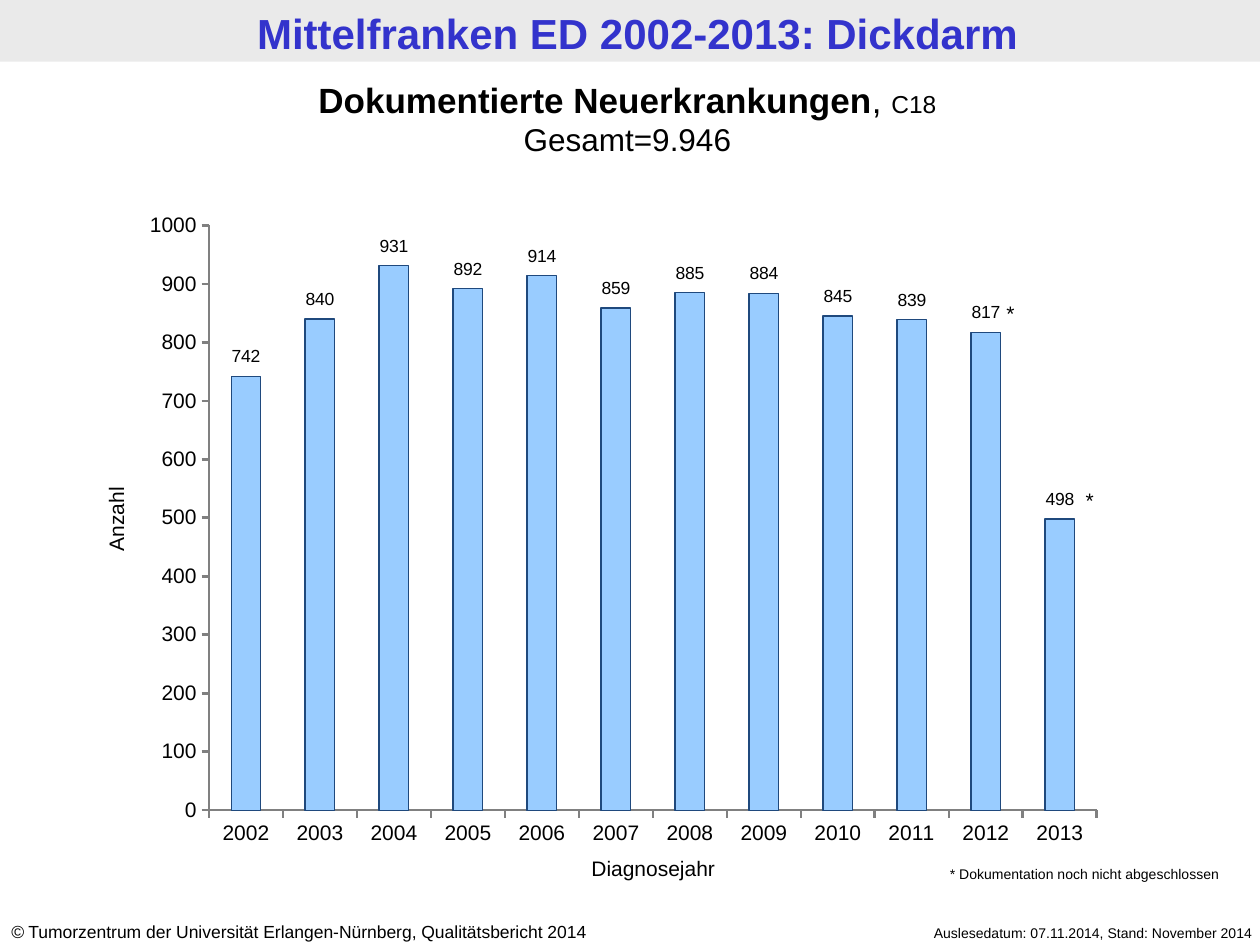
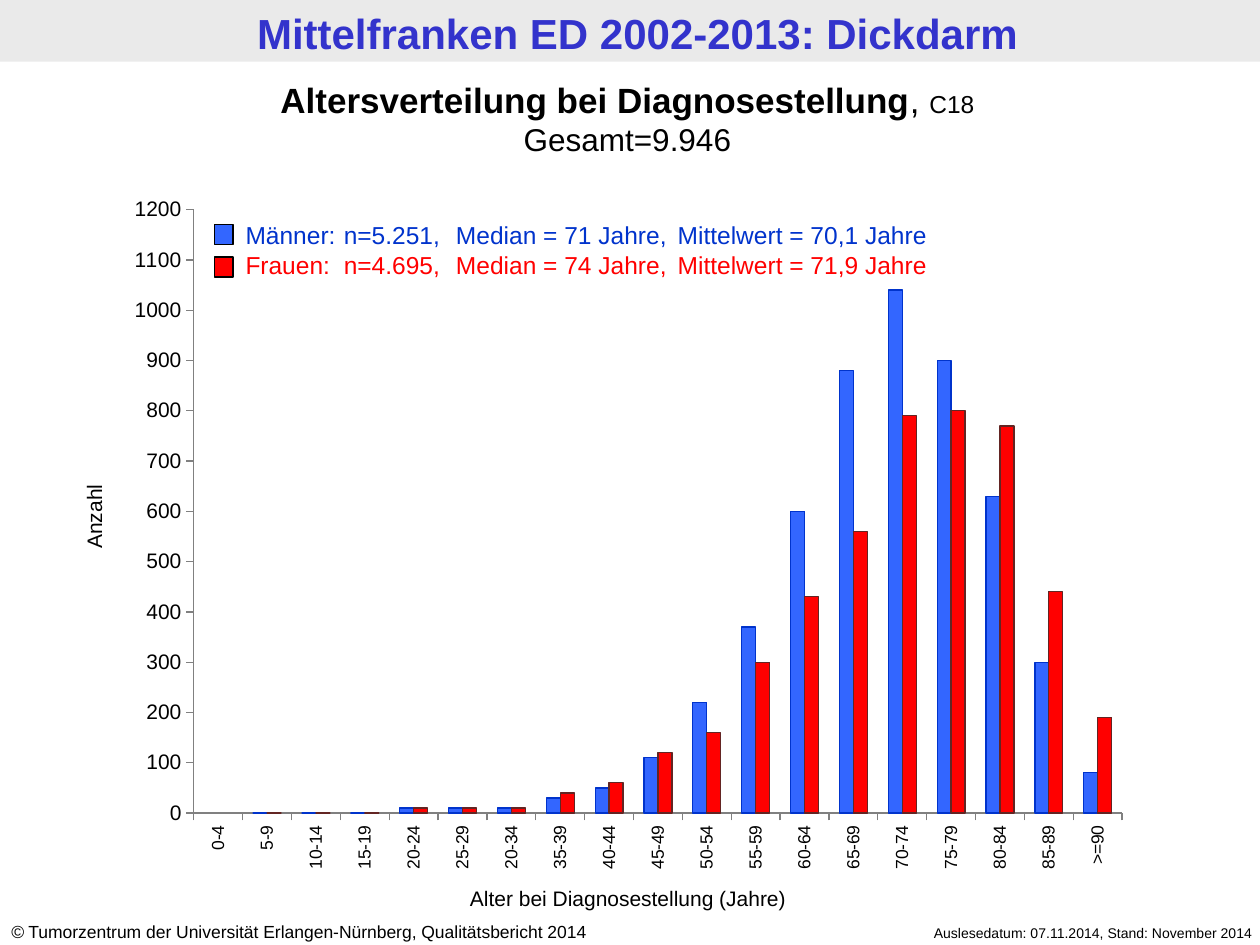
from lxml.etree import SubElement
from pptx import Presentation
from pptx.chart.data import CategoryChartData
from pptx.dml.color import RGBColor
from pptx.enum.chart import XL_CHART_TYPE, XL_TICK_MARK
from pptx.enum.shapes import MSO_SHAPE
from pptx.enum.text import MSO_ANCHOR, MSO_AUTO_SIZE, PP_ALIGN
from pptx.oxml import parse_xml
from pptx.oxml.ns import nsdecls, qn
from pptx.util import Inches, Pt

# Shared style
FONT = "Arial"
BLACK, GREY, BAND, TITLE_BLUE = "000000", "808080", "EAEAEA", "3333CC"
LIGHT_BLUE, NAVY = "99CCFF", "1F497D"
MEN_FILL, MEN_LINE = "3366FF", "0033CC"
WOMEN_FILL, WOMEN_LINE = "FF0000", "632523"
LEFT, CENTER, RIGHT = PP_ALIGN.LEFT, PP_ALIGN.CENTER, PP_ALIGN.RIGHT
COLUMNS, ROWS = 100, 75


def color(hex_string):
    return RGBColor.from_string(hex_string)


def add_run(paragraph, text, size=12, ink=BLACK, bold=False, italic=False):
    run = paragraph.add_run()
    run.text = text
    font = run.font
    font.name, font.size = FONT, Pt(size)
    font.bold, font.italic = bold, italic
    font.color.rgb = color(ink)


def manual_layout(inner=False, **shares):
    """Layout element for a plot area or a data label."""
    target = '<c:layoutTarget val="inner"/>' if inner else ""
    modes = "".join(f'<c:{side}Mode val="edge"/>' for side in "xy") if inner else ""
    values = "".join(f'<c:{key} val="{value:.4f}"/>' for key, value in shares.items())
    return parse_xml(f'<c:layout {nsdecls("c")}><c:manualLayout>{target}{modes}{values}'
                     '</c:manualLayout></c:layout>')


class Deck:
    def __init__(self):
        self.presentation = Presentation()
        self.presentation.slide_width = Inches(10)
        self.presentation.slide_height = Inches(7.5)
        self.slide = None

    def box(self, left, top, width, height):
        """Grid columns and rows to slide lengths."""
        column = self.presentation.slide_width / COLUMNS
        row = self.presentation.slide_height / ROWS
        return (int(left * column), int(top * row), int(width * column), int(height * row))

    def fill_text(self, frame, paragraphs, align=LEFT, tabs=()):
        """Each paragraph is a list of (text, format) runs."""
        frame.word_wrap = True
        frame.auto_size = MSO_AUTO_SIZE.NONE
        frame.vertical_anchor = MSO_ANCHOR.TOP
        for index, runs in enumerate(paragraphs):
            paragraph = frame.add_paragraph() if index else frame.paragraphs[0]
            paragraph.alignment = align
            if tabs:
                tab_list = SubElement(paragraph._p.get_or_add_pPr(), qn("a:tabLst"))
                for position in tabs:
                    SubElement(tab_list, qn("a:tab"), pos=str(Inches(position)), algn="l")
            for text, style in runs:
                add_run(paragraph, text, **style)

    def text(self, place, paragraphs, align=LEFT, rotation=0, tabs=()):
        shape = self.slide.shapes.add_textbox(*self.box(*place))
        shape.rotation = rotation
        self.fill_text(shape.text_frame, paragraphs, align, tabs)

    def label(self, place, text, align=CENTER, rotation=0, **style):
        self.text(place, [[(text, style)]], align, rotation)

    def rectangle(self, place, fill, line=None):
        shape = self.slide.shapes.add_shape(MSO_SHAPE.RECTANGLE, *self.box(*place))
        shape.shadow.inherit = False
        shape.fill.solid()
        shape.fill.fore_color.rgb = color(fill)
        if line:
            shape.line.color.rgb = color(line)
            shape.line.width = Pt(0.75)
        else:
            shape.line.fill.background()

    def new_slide(self, heading):
        """Title-only slide with band, heading and footers."""
        self.slide = self.presentation.slides.add_slide(self.presentation.slide_layouts[5])
        self.rectangle((0, 0, 100, 4.9), BAND)
        self.label((0.6, 0.1, 100, 4.9), "Mittelfranken ED 2002-2013: Dickdarm",
                   size=24, ink=TITLE_BLUE, bold=True)
        self.label((66.5, 72.9, 33.9, 2.4), "Auslesedatum: 07.11.2014, Stand: November 2014",
                   RIGHT, size=8)
        self.text((-0.1, 72.6, 52.4, 2.7), [[
            ("©", dict(size=10, italic=True)),
            (" Tumorzentrum der Universität Erlangen-Nürnberg, Qualitätsbericht 2014",
             dict(size=10))]])
        title = self.slide.shapes.title
        title.left, title.top, title.width, title.height = self.box(-0.4, 5.7, 100.4, 7.4)
        self.fill_text(title.text_frame, [
            [(heading, dict(size=20, bold=True)), (", ", dict(size=20)), ("C18", dict(size=14))],
            [("Gesamt=9.946", dict(size=18))]], CENTER)

    def chart(self, place, kind, categories, series_values, colors, maximum, plot_area,
              overlap=0, category_size=12, axis_width=0.75):
        data = CategoryChartData()
        data.categories = categories
        for number, values in enumerate(series_values, 1):
            data.add_series(f"Series {number}", values)
        chart = self.slide.shapes.add_chart(kind, *self.box(*place), data).chart
        chart.has_legend = chart.has_title = False
        chart.font.name, chart.font.size = FONT, Pt(12)
        chart.font.color.rgb = color(BLACK)

        plot = chart.plots[0]
        plot.gap_width, plot.overlap, plot.vary_by_categories = 150, overlap, False
        for series, (fill, line) in zip(plot.series, colors):
            series.format.fill.solid()
            series.format.fill.fore_color.rgb = color(fill)
            series.format.line.color.rgb = color(line)
            series.format.line.width = Pt(0.75)

        value_axis, category_axis = chart.value_axis, chart.category_axis
        value_axis.minimum_scale, value_axis.maximum_scale = 0, maximum
        value_axis.major_unit = 100
        for axis, size in ((value_axis, 12), (category_axis, category_size)):
            axis.has_major_gridlines = False
            axis.major_tick_mark = XL_TICK_MARK.OUTSIDE
            axis.minor_tick_mark = XL_TICK_MARK.NONE
            axis.tick_labels.font.size = Pt(size)
            axis.tick_labels.font.name = FONT
            axis.format.line.color.rgb = color(GREY)
            axis.format.line.width = Pt(axis_width)

        area = chart._chartSpace.chart.plotArea
        for layout in area.findall(qn("c:layout")):
            area.remove(layout)
        area.insert(0, manual_layout(True, **plot_area))
        return chart

    def labels_above(self, chart, maximum, plot_height, gap):
        """Move the centred value labels of a stacked chart above the bars."""
        series = chart.plots[0].series[0]
        labels = series.data_labels
        labels.show_value = True
        labels.font.size = Pt(10)
        for index in range(len(series.values)):
            series.points[index].data_label.font.size = Pt(10)
        for leader in labels._element.findall(qn("c:showLeaderLines")):
            leader.set("val", "0")
        for element, value in zip(labels._element.findall(qn("c:dLbl")), series.values):
            rise = value / maximum / 2 * plot_height + gap
            element.insert(1, manual_layout(x=0, y=-rise))


def build_new_cases(deck):
    deck.new_slide("Dokumentierte Neuerkrankungen")
    plot_area = dict(x=0.066, y=0.029, w=0.914, h=0.903)
    cases = [742, 840, 931, 892, 914, 859, 885, 884, 845, 839, 817, 498]
    chart = deck.chart((11.5, 16.4, 77.1, 51.4), XL_CHART_TYPE.COLUMN_STACKED,
                       [str(year) for year in range(2002, 2014)], [cases],
                       [(LIGHT_BLUE, NAVY)], 1000, plot_area, overlap=100, axis_width=1.5)
    deck.labels_above(chart, 1000, plot_area["h"], 0.03)
    deck.label((40.6, 67.4, 22.5, 3), "Diagnosejahr")
    deck.label((3.1, 39.7, 12.2, 3), "Anzahl", rotation=270)

    # Marks for incomplete years
    for left, top in ((77.6, 23.4), (83.9, 38.2)):
        deck.label((left, top, 3.9, 3), "*", RIGHT)
    deck.label((74.4, 68.2, 24.4, 2.4), "* Dokumentation noch nicht abgeschlossen", LEFT, size=8)


def build_age_distribution(deck):
    deck.new_slide("Altersverteilung bei Diagnosestellung")
    ages = ["0-4", "5-9", "10-14", "15-19", "20-24", "25-29", "20-34", "35-39", "40-44",
            "45-49", "50-54", "55-59", "60-64", "65-69", "70-74", "75-79", "80-84",
            "85-89", ">=90"]
    men = [None, 0, 0, 0, 10, 10, 10, 30, 50, 110, 220, 370, 600, 880, 1040, 900, 630, 300, 80]
    women = [None, 0, 0, 0, 10, 10, 10, 40, 60, 120, 160, 300, 430, 560, 790, 800, 770, 440, 190]
    chart = deck.chart((9.1, 14.7, 81.6, 55.5), XL_CHART_TYPE.COLUMN_CLUSTERED, ages,
                       [men, women], [(MEN_FILL, MEN_LINE), (WOMEN_FILL, WOMEN_LINE)],
                       1200, dict(x=0.077, y=0.035, w=0.903, h=0.863), category_size=10)
    body = chart.category_axis._element.find(qn("c:txPr")).find(qn("a:bodyPr"))
    body.set("rot", "-5400000")
    body.set("vert", "horz")

    # Key with statistics
    deck.text((18.5, 17, 68.5, 5.7), [
        [("Männer:\tn=5.251,\tMedian = 71 Jahre,\tMittelwert = 70,1 Jahre",
          dict(size=14, ink=MEN_LINE))],
        [("Frauen:\tn=4.695,\tMedian = 74 Jahre,\tMittelwert = 71,9 Jahre",
          dict(size=14, ink=WOMEN_FILL))]], tabs=(0.78, 1.67, 3.43))
    for top, fill in ((17.8, MEN_FILL), (20.4, WOMEN_FILL)):
        deck.rectangle((17, top, 1.5, 1.6), fill, BLACK)

    deck.label((34.5, 69.8, 30.7, 3), "Alter bei Diagnosestellung (Jahre)")
    deck.label((-5.6, 39.5, 26.1, 3), "Anzahl", rotation=270)


def main():
    deck = Deck()
    build_new_cases(deck)
    build_age_distribution(deck)
    deck.presentation.save("out.pptx")


if __name__ == "__main__":
    main()
